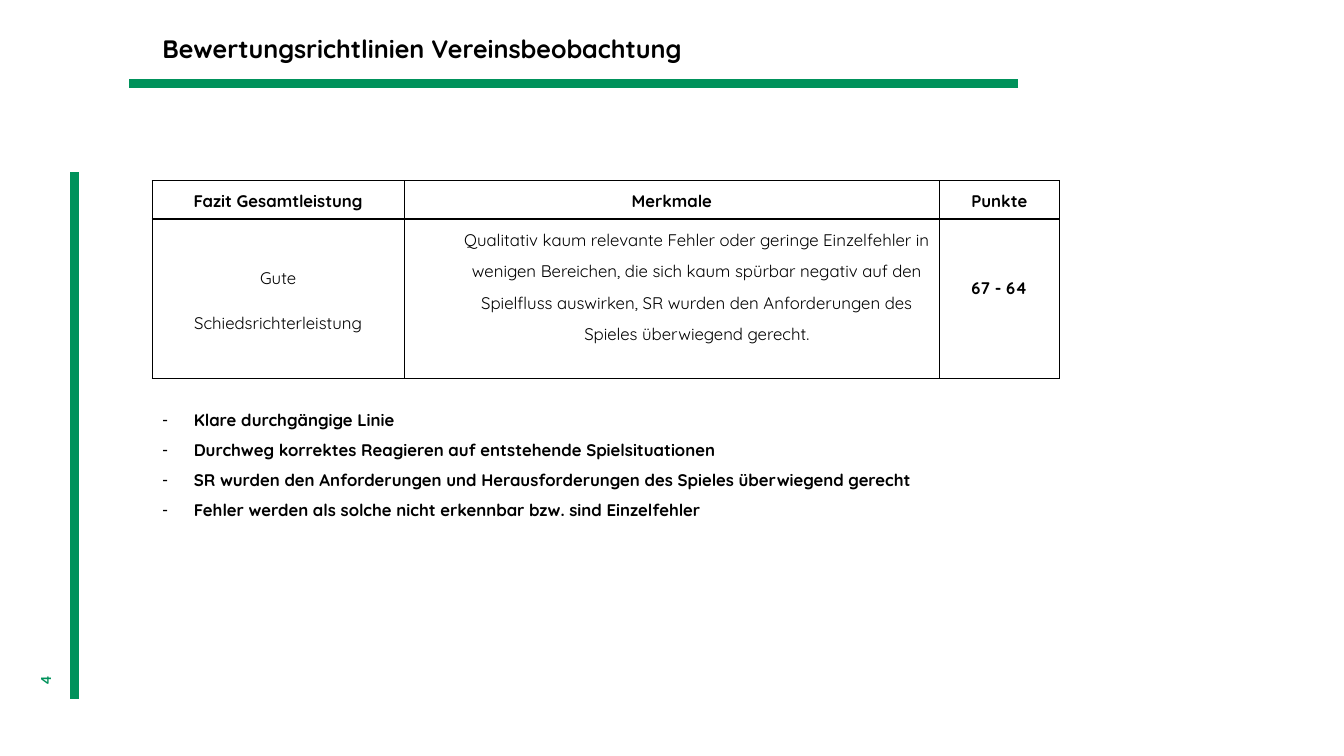
from lxml import etree
from pptx import Presentation
from pptx.dml.color import RGBColor
from pptx.enum.shapes import MSO_CONNECTOR
from pptx.enum.text import MSO_ANCHOR, MSO_AUTO_SIZE, PP_ALIGN
from pptx.oxml.ns import qn
from pptx.util import Pt

STRAIGHT = MSO_CONNECTOR.STRAIGHT
TOP, MIDDLE = MSO_ANCHOR.TOP, MSO_ANCHOR.MIDDLE
LEFT, CENTER, RIGHT = PP_ALIGN.LEFT, PP_ALIGN.CENTER, PP_ALIGN.RIGHT
NO_AUTOFIT = MSO_AUTO_SIZE.NONE

COLORS = {"green": "00925B", "black": "000000"}
FONT = "Quicksand"
CONTENT_LEFT = 108.7

HEADERS = ["Fazit Gesamtleistung", "Merkmale", "Punkte"]
RATING = ["Gute", "Schiedsrichterleistung"]
FEATURES = [
    "Qualitativ kaum relevante Fehler oder geringe Einzelfehler in wenigen "
    "Bereichen, die sich kaum spürbar negativ auf den Spielfluss auswirken, "
    "SR wurden den Anforderungen des Spieles überwiegend gerecht."
]
POINTS = ["67 - 64"]
BULLETS = [
    "Klare durchgängige Linie",
    "Durchweg korrektes Reagieren auf entstehende Spielsituationen",
    "SR wurden den Anforderungen und Herausforderungen des Spieles überwiegend gerecht",
    "Fehler werden als solche nicht erkennbar bzw. sind Einzelfehler",
]


def place(shape, box):
    shape.left, shape.top, shape.width, shape.height = (Pt(value) for value in box)


def format_runs(paragraph, size, bold=True, color="black", name=FONT):
    for run in paragraph.runs:
        run.font.size = Pt(size)
        run.font.bold = bold
        run.font.name = name
        run.font.color.rgb = RGBColor.from_string(COLORS[color])


def add_bar(slide, start, end):
    bar = slide.shapes.add_connector(STRAIGHT, *(Pt(value) for value in start + end))
    bar.line.width = Pt(6)
    bar.line.color.rgb = RGBColor.from_string(COLORS["green"])
    etree.SubElement(bar._element.spPr, qn("a:effectLst"))


def add_title(slide, box):
    title = slide.shapes.title
    place(title, box)
    frame = title.text_frame
    frame.text = "Bewertungsrichtlinien Vereinsbeobachtung"
    frame.auto_size = NO_AUTOFIT
    frame.vertical_anchor = MIDDLE
    paragraph = frame.paragraphs[0]
    paragraph.alignment = LEFT
    paragraph.line_spacing = 0.9
    format_runs(paragraph, 18)


def add_bullets(slide, box):
    body = slide.placeholders[1]
    place(body, box)
    frame = body.text_frame
    frame.text = "\n".join(BULLETS)
    frame.auto_size = NO_AUTOFIT
    frame.vertical_anchor = TOP
    for paragraph in frame.paragraphs:
        properties = paragraph._p.get_or_add_pPr()
        properties.set("marL", str(Pt(22.5)))
        properties.set("indent", str(Pt(-22.5)))
        etree.SubElement(properties, qn("a:buChar"), char="-")
        paragraph.line_spacing = 1.5
        paragraph.space_before = Pt(0)
        format_runs(paragraph, 12)


def add_page_number(slide, box):
    number = slide.shapes.add_textbox(*(Pt(value) for value in box))
    number.rotation = 270
    frame = number.text_frame
    frame.text = "4"
    frame.word_wrap = True
    frame.vertical_anchor = MIDDLE
    frame.paragraphs[0].alignment = RIGHT
    format_runs(frame.paragraphs[0], 11, color="green", name="Calibri")


def add_cell_borders(cell):
    properties = cell._tc.get_or_add_tcPr()
    for side in ("a:lnL", "a:lnR", "a:lnT", "a:lnB"):
        line = etree.SubElement(properties, qn(side), w=str(Pt(1)))
        fill = etree.SubElement(line, qn("a:solidFill"))
        etree.SubElement(fill, qn("a:srgbClr"), val=COLORS["black"])


def fill_cell(cell, lines, bold=True, spacing=1.5, top=0, indent=0):
    cell.margin_left = cell.margin_right = Pt(5)
    cell.margin_top, cell.margin_bottom = Pt(top), Pt(0)
    cell.vertical_anchor = TOP
    add_cell_borders(cell)
    cell.fill.background()
    cell.text_frame.text = "\n".join(lines)
    for paragraph in cell.text_frame.paragraphs:
        paragraph._p.get_or_add_pPr().set("marL", str(Pt(indent)))
        paragraph.alignment = CENTER
        paragraph.line_spacing = spacing
        paragraph.space_after = Pt(10)
        format_runs(paragraph, 12, bold)


def add_rating_table(slide, box):
    table = slide.shapes.add_table(2, 3, *(Pt(value) for value in box)).table
    table.first_row = table.horz_banding = False
    for column, width in zip(table.columns, (180, 382.3, 85.7)):
        column.width = Pt(width)
    header_height = 27.4
    table.rows[0].height = Pt(header_height)
    table.rows[1].height = Pt(box[3] - header_height)

    for index, header in enumerate(HEADERS):
        fill_cell(table.cell(0, index), [header])
    fill_cell(table.cell(1, 0), RATING, bold=False, top=27.2)
    fill_cell(table.cell(1, 1), FEATURES, bold=False, indent=36)
    fill_cell(table.cell(1, 2), POINTS, spacing=2, top=27.2)


def main():
    presentation = Presentation()
    presentation.slide_width, presentation.slide_height = Pt(960), Pt(540)
    slide = presentation.slides.add_slide(presentation.slide_layouts[1])

    # Green bars
    add_bar(slide, (53.3, 123), (53.3, 499))
    add_bar(slide, (727.2, 59.8), (92.2, 59.8))

    # Title, rating table, criteria and page number
    add_title(slide, (CONTENT_LEFT, 21.6, 623.5, 28))
    add_rating_table(slide, (CONTENT_LEFT, 129, 648, 141.2))
    add_bullets(slide, (CONTENT_LEFT, 281.5, 667.4, 160))
    add_page_number(slide, (14.4, 479.5, 35.3, 28.8))

    presentation.save("out.pptx")


if __name__ == "__main__":
    main()
